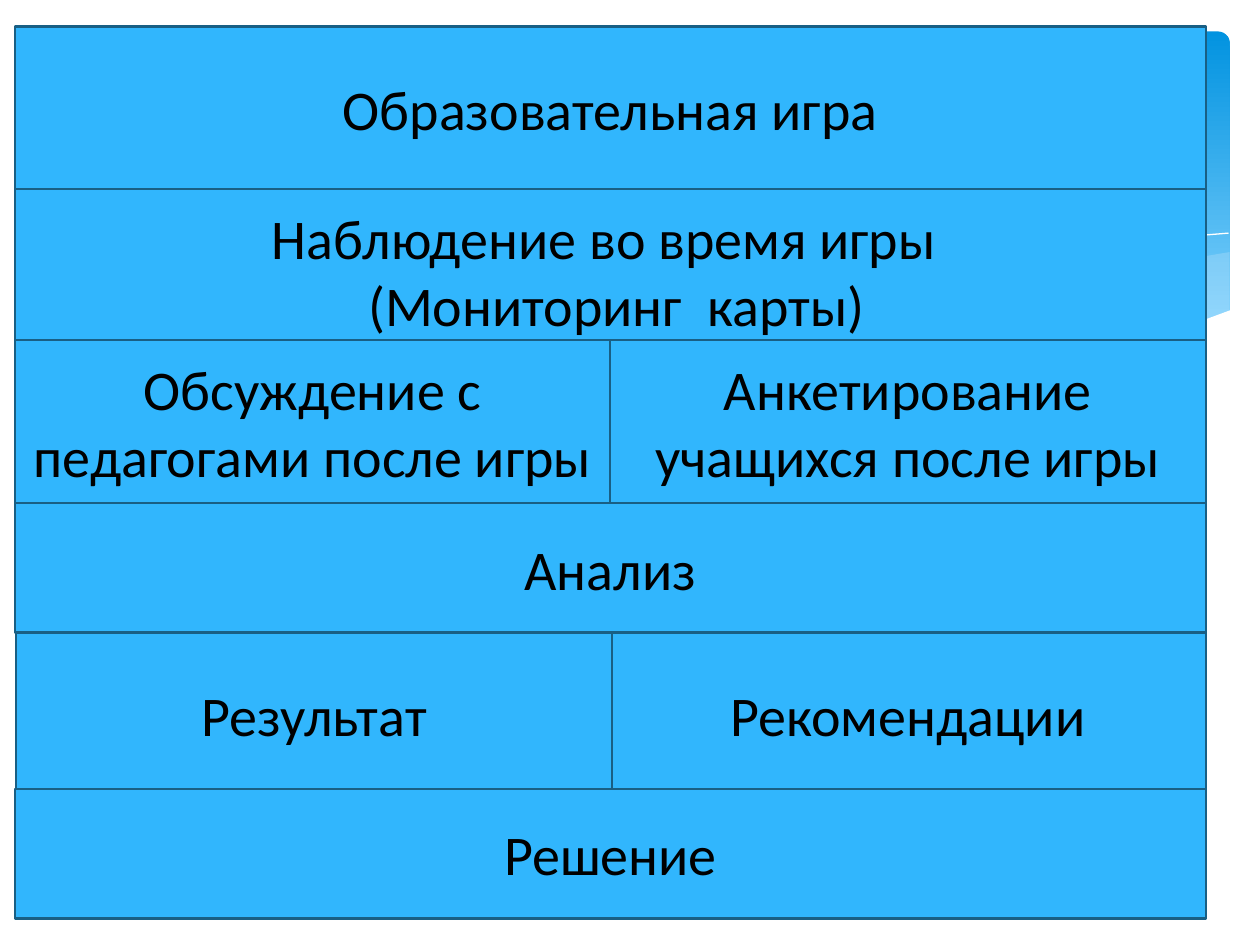
import pptx
import pptx.util
import pptx.dml.color
import pptx.enum.shapes
import pptx.enum.text
import pptx.oxml
import pptx.oxml.ns
from pptx.util import Inches

COLORS = {
    "deep": "0293E0",
    "pale": "83D3FE",
    "mist": "C6E7FC",
    "white": "FFFFFF",
    "box": "31B6FD",
    "edge": "195F84",
    "text": "000000",
}

MIST = [(9.76, 2), (9.35, 2.07), (8.61, 2.23), (7.79, 2.42), (7.06, 2.57),
        (6.61, 2.65), (7.05, 2.71), (7.57, 2.76), (8.03, 2.78), (8.54, 2.76),
        (8.97, 2.7), (9.35, 2.62), (9.63, 2.52), (9.76, 2.47)]
CREST = [(6.13, 2.57), (6.53, 2.46), (6.95, 2.35), (7.48, 2.23), (8.06, 2.1),
         (8.66, 1.99), (9.1, 1.92), (9.51, 1.87), (9.75, 1.85)]
WAVE = [(9.77, 2.46), (9.5, 2.56), (9.2, 2.65), (8.87, 2.71), (8.5, 2.75),
        (8.09, 2.77), (7.61, 2.75), (7.08, 2.7), (6.48, 2.62), (5.79, 2.5),
        (5.03, 2.33), (4.47, 2.2), (3.91, 2.07), (3.4, 1.97), (2.92, 1.9),
        (2.5, 1.86), (2.11, 1.84), (1.61, 1.84), (1.19, 1.87), (0.85, 1.93),
        (0.52, 2.01), (0.23, 2.13), (0.23, 3.29), (9.77, 3.29)]

LEFT, WIDTH = 0.12, 9.45
HALF = WIDTH / 2
MID = LEFT + HALF
TALL, LOW = 1.29, 1.03

# left, top, width, height, lines of text
BOXES = [
    (LEFT, 0.21, WIDTH, TALL, ["Образовательная игра"]),
    (LEFT, 1.5, WIDTH, TALL,
     ["Наблюдение во время игры ", " (Мониторинг  карты)"]),
    (MID, 2.7, HALF, TALL, ["Анкетирование учащихся после игры"]),
    (LEFT, 2.7, HALF, TALL, ["Обсуждение с педагогами после игры"]),
    (LEFT, 3.99, WIDTH, LOW, ["Анализ"]),
    (MID, 5.02, HALF, TALL, ["Рекомендации"]),
    (LEFT + 0.01, 5.02, HALF, TALL, ["Результат"]),
    (LEFT, 6.26, WIDTH, LOW, ["Решение"]),
]


def tint(name):
    return pptx.dml.color.RGBColor.from_string(COLORS[name])


class Board:
    font = "Calibri"
    size = pptx.util.Pt(32)
    stroke = pptx.util.Pt(1.25)

    def __init__(self, slide):
        self.slide = slide

    def shape(self, kind, left, top, width, height):
        shape = self.slide.shapes.add_shape(
            kind, Inches(left), Inches(top), Inches(width), Inches(height))
        shape.shadow.inherit = False
        return shape

    def panel(self, left, top, width, height):
        """Add the rounded backdrop that fades downwards."""
        panel = self.shape(pptx.enum.shapes.MSO_SHAPE.ROUNDED_RECTANGLE,
                           left, top, width, height)
        panel.adjustments[0] = 0.034
        panel.line.fill.background()
        panel.fill.gradient()
        panel.fill.gradient_angle = 270
        for stop, name, place in zip(panel.fill.gradient_stops,
                                     ("deep", "pale"), (0, 0.9)):
            stop.color.rgb = tint(name)
            stop.position = place

    def outline(self, points, close):
        spots = [(Inches(x), Inches(y)) for x, y in points]
        pen = self.slide.shapes.build_freeform(*spots[0])
        pen.add_line_segments(spots[1:], close=close)
        shape = pen.convert_to_shape()
        shape.shadow.inherit = False
        return shape

    def area(self, points, name, alpha=100):
        """Add a filled outline; alpha is its opacity in percent."""
        shape = self.outline(points, True)
        shape.line.fill.background()
        shape.fill.solid()
        shape.fill.fore_color.rgb = tint(name)
        if alpha < 100:
            color = shape.element.spPr.find(
                "/".join(map(pptx.oxml.ns.qn, ("a:solidFill", "a:srgbClr"))))
            color.append(pptx.oxml.parse_xml(
                f'<a:alpha {pptx.oxml.ns.nsdecls("a")} val="{alpha * 1000}"/>'))

    def curve(self, points, name):
        shape = self.outline(points, False)
        shape.fill.background()
        shape.line.color.rgb = tint(name)
        shape.line.width = 0

    def box(self, left, top, width, height, lines):
        box = self.shape(pptx.enum.shapes.MSO_SHAPE.RECTANGLE,
                         left, top, width, height)
        box.fill.solid()
        box.fill.fore_color.rgb = tint("box")
        box.line.color.rgb = tint("edge")
        box.line.width = self.stroke
        frame = box.text_frame
        frame.word_wrap = True
        frame.vertical_anchor = pptx.enum.text.MSO_ANCHOR.MIDDLE
        frame.text = "\n".join(lines)
        for line in frame.paragraphs:
            line.alignment = pptx.enum.text.PP_ALIGN.CENTER
            line.font.name = self.font
            line.font.size = self.size
            line.font.color.rgb = tint("text")


def main():
    deck = pptx.Presentation()
    deck.slide_width, deck.slide_height = Inches(10), Inches(7.5)
    board = Board(deck.slides.add_slide(deck.slide_layouts[6]))
    board.panel(0.25, 0.25, 9.51, 2.7)
    board.area(MIST, "mist", 29)
    board.curve(CREST, "white")
    board.area(WAVE, "white")
    for box in BOXES:
        board.box(*box)
    deck.save("out.pptx")


if __name__ == "__main__":
    main()
